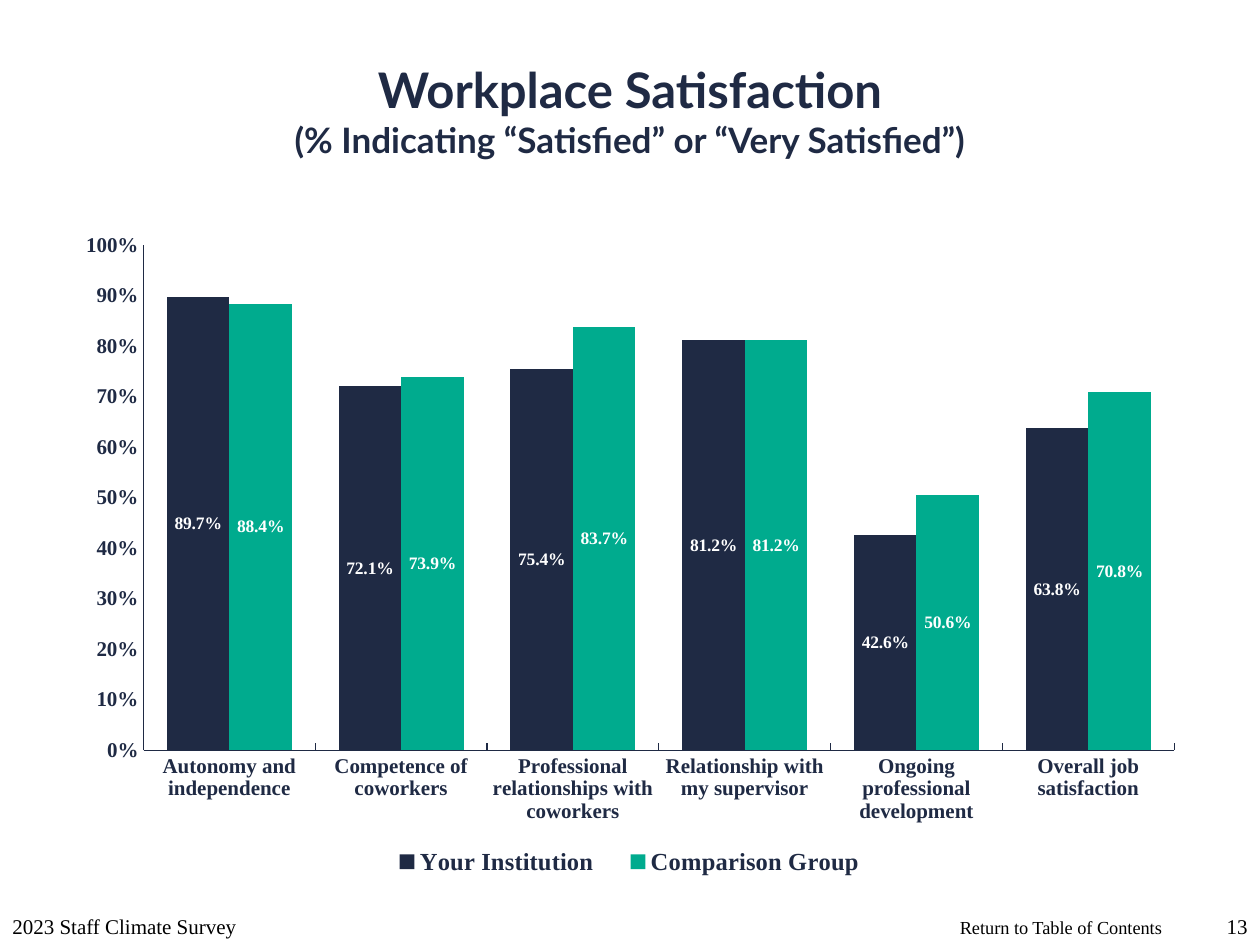
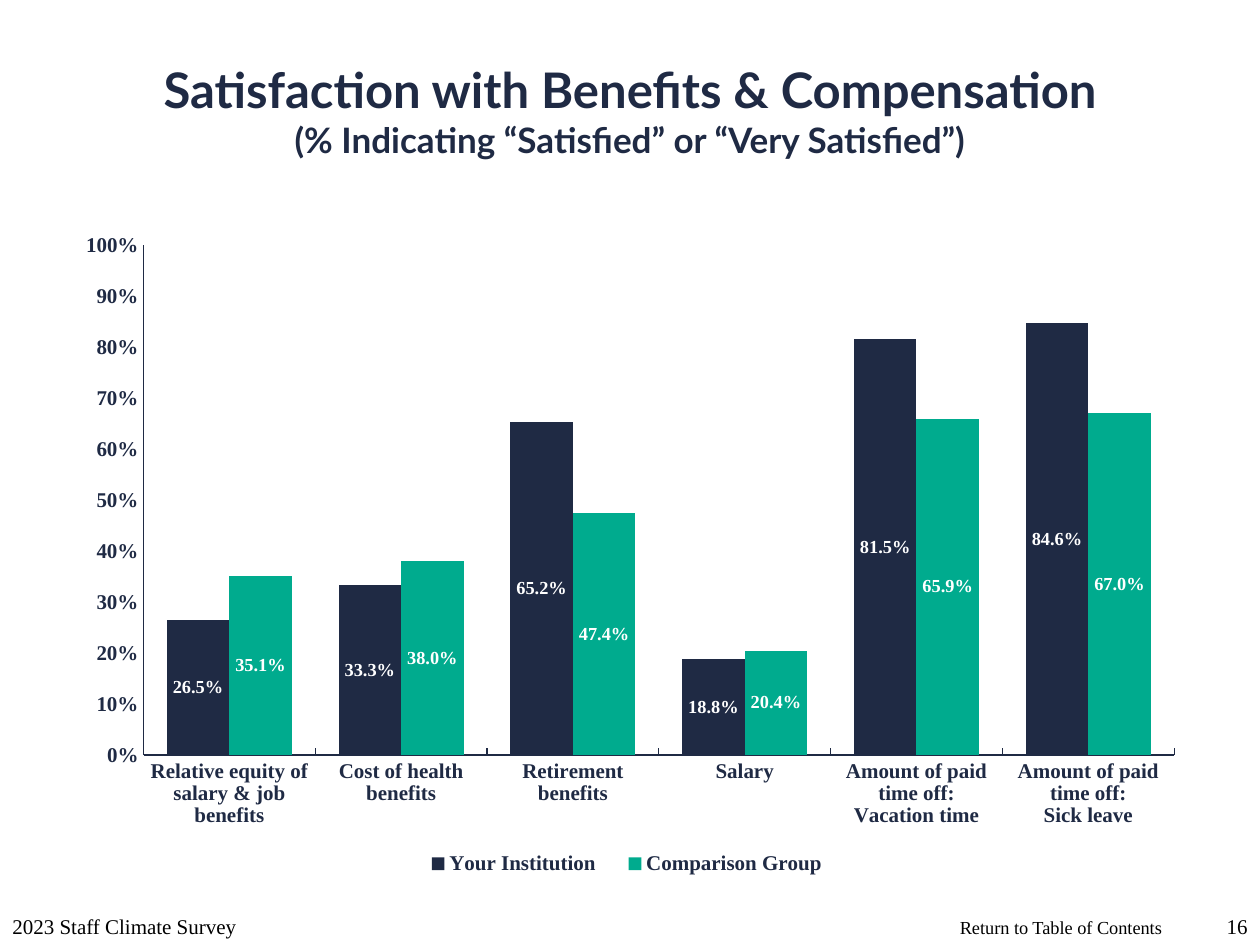
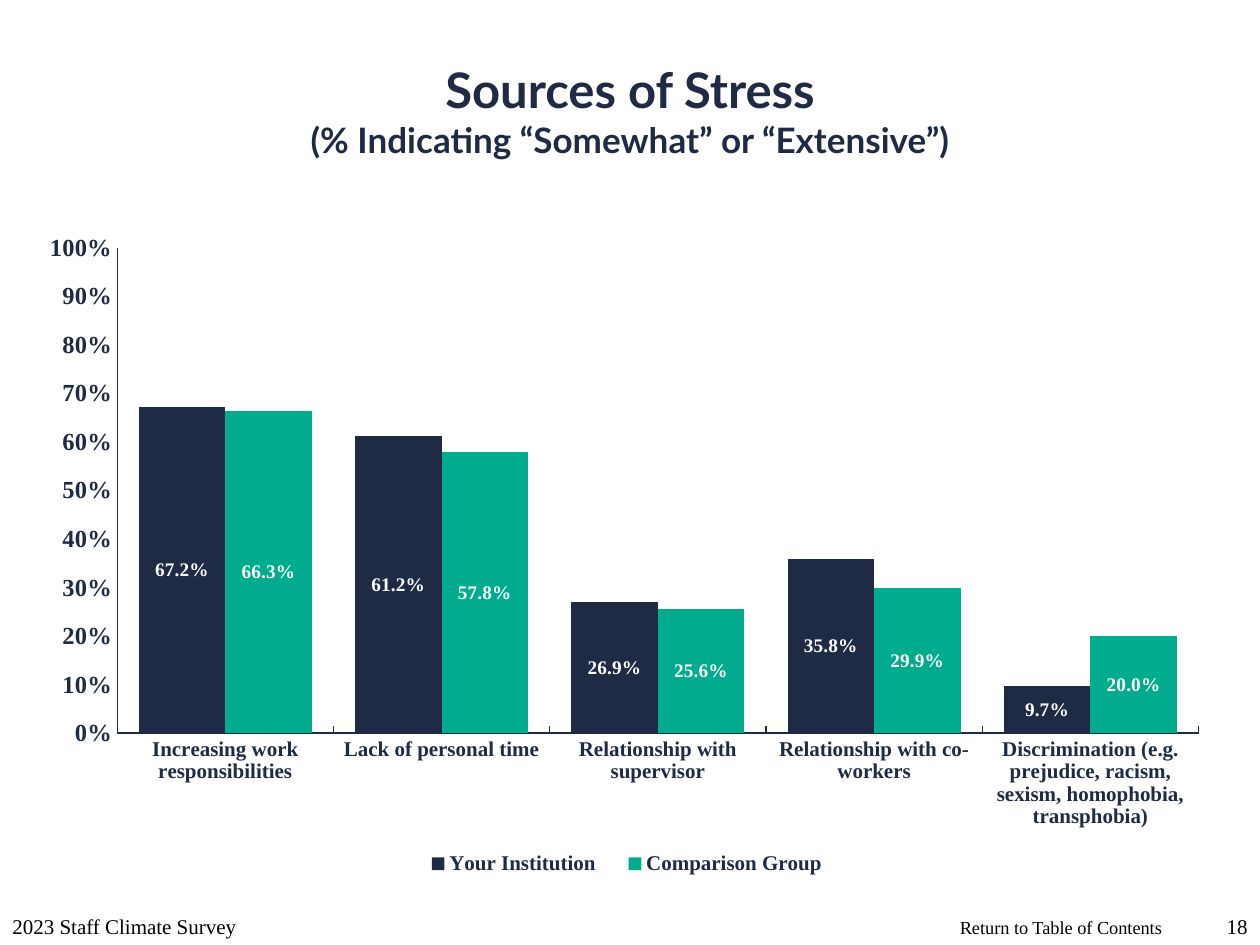
from dataclasses import dataclass

import lxml.etree
import pptx
import pptx.chart.axis
import pptx.chart.chart
import pptx.chart.data
import pptx.dml.color
import pptx.enum.chart
import pptx.enum.text
import pptx.oxml.ns
import pptx.slide
import pptx.text.text
import pptx.util

Pt = pptx.util.Pt
Align = pptx.enum.text.PP_ALIGN
Anchor = pptx.enum.text.MSO_ANCHOR
qn = pptx.oxml.ns.qn

COLORS = {"navy": "1F2A44", "green": "00AB8E", "black": "000000", "white": "FFFFFF"}
TITLE_FONT = "Lato"
BODY_FONT = "Times New Roman"
SLIDE_WIDTH, SLIDE_HEIGHT = 720, 540
FOOTER_TOP, FOOTER_HEIGHT = 504, 36
SERIES = (("Your Institution", "navy"), ("Comparison Group", "green"))
SATISFIED = "(% Indicating “Satisfied” or “Very Satisfied”)"


@dataclass(frozen=True)
class Box:
    """A rectangle on the slide, in points."""
    left: float
    top: float
    width: float
    height: float

    def lengths(self) -> tuple:
        return Pt(self.left), Pt(self.top), Pt(self.width), Pt(self.height)


@dataclass(frozen=True)
class TextStyle:
    size: float
    color: str = "black"
    font: str = BODY_FONT
    bold: bool = False


@dataclass(frozen=True)
class SurveySlide:
    number: int
    title: str
    subtitle: str
    results: dict[str, tuple[float, float]]
    plot: Box
    chart: Box = Box(36, 126, 648, 378)
    legend: Box = Box(232, 483.3, 252.5, 22)
    gap: int = 75
    label_size: float = 10
    value_axis_size: float = 12
    legend_size: float = 12


SURVEY_SLIDES = (
    SurveySlide(
        13, "Workplace Satisfaction", SATISFIED,
        {
            "Autonomy and independence": (0.897, 0.884),
            "Competence of coworkers": (0.721, 0.739),
            "Professional relationships with coworkers": (0.754, 0.837),
            "Relationship with my supervisor": (0.812, 0.812),
            "Ongoing professional development": (0.426, 0.506),
            "Overall job satisfaction": (0.638, 0.708),
        },
        plot=Box(82, 140, 589, 288.8),
        legend=Box(212, 481, 295.5, 24), legend_size=14,
    ),
    SurveySlide(
        16, "Satisfaction with Benefits & Compensation", SATISFIED,
        {
            "Relative equity of salary & job benefits": (0.265, 0.351),
            "Cost of health benefits": (0.333, 0.38),
            "Retirement benefits": (0.652, 0.474),
            "Salary": (0.188, 0.204),
            "Amount of paid time off:\nVacation time": (0.815, 0.659),
            "Amount of paid time off:\nSick leave": (0.846, 0.67),
        },
        plot=Box(82, 140, 589, 291.5), label_size=10.5,
    ),
    SurveySlide(
        18, "Sources of Stress", "(% Indicating “Somewhat” or “Extensive”)",
        {
            "Increasing work responsibilities": (0.672, 0.663),
            "Lack of personal time": (0.612, 0.578),
            "Relationship with supervisor": (0.269, 0.256),
            "Relationship with co-workers": (0.358, 0.299),
            "Discrimination (e.g. prejudice, racism, sexism, homophobia, transphobia)": (0.097, 0.2),
        },
        plot=Box(67, 141.5, 618, 277.5), chart=Box(14.4, 126, 684, 378),
        gap=50, label_size=11, value_axis_size=14,
    ),
)


def rgb(color: str) -> pptx.dml.color.RGBColor:
    return pptx.dml.color.RGBColor.from_string(COLORS[color])


def apply_style(font: pptx.text.text.Font, style: TextStyle) -> None:
    font.name = style.font
    font.size = Pt(style.size)
    font.bold = style.bold
    font.color.rgb = rgb(style.color)


def add_text(
    slide: pptx.slide.Slide, box: Box, lines: list[tuple[str, TextStyle]],
    align: Align = Align.LEFT, anchor: Anchor = Anchor.BOTTOM, wrap: bool = True,
) -> None:
    """Add one paragraph whose lines are parted by line breaks."""
    frame = slide.shapes.add_textbox(*box.lengths()).text_frame
    frame.word_wrap = wrap
    frame.vertical_anchor = anchor
    paragraph = frame.paragraphs[0]
    paragraph.alignment = align
    for index, (text, style) in enumerate(lines):
        if index:
            paragraph.add_line_break()
        run = paragraph.add_run()
        run.text = text
        apply_style(run.font, style)


def add_title(slide: pptx.slide.Slide, title: str, subtitle: str) -> None:
    lines = [
        (text, TextStyle(size, "navy", TITLE_FONT, True))
        for text, size in ((title, 28), (subtitle, 20))
    ]
    add_text(slide, Box(0, 18, SLIDE_WIDTH, 90), lines, Align.CENTER, Anchor.MIDDLE)


def add_footer(slide: pptx.slide.Slide, number: int) -> None:
    style = TextStyle(12)
    add_text(slide, Box(541.4, 520, 131, 20),
             [("Return to Table of Contents", TextStyle(10.5))],
             anchor=Anchor.TOP, wrap=False)
    add_text(slide, Box(0, FOOTER_TOP, 228, FOOTER_HEIGHT),
             [("2023 Staff Climate Survey", style)])
    add_text(slide, Box(SLIDE_WIDTH - 36, FOOTER_TOP, 36, FOOTER_HEIGHT),
             [(str(number), style)], Align.RIGHT)


def style_axis(
    axis: pptx.chart.axis._BaseAxis, size: float,
    tick: pptx.enum.chart.XL_TICK_MARK,
) -> None:
    axis.has_major_gridlines = False
    axis.major_tick_mark = tick
    axis.minor_tick_mark = pptx.enum.chart.XL_TICK_MARK.NONE
    axis.format.line.color.rgb = rgb("navy")
    axis.format.line.width = Pt(0.75)
    apply_style(axis.tick_labels.font, TextStyle(size, "navy", bold=True))


def keep_labels_level(chart: pptx.chart.chart.Chart) -> None:
    """Make long category labels wrap instead of turning."""
    body = chart.element.find(f".//{qn('c:catAx')}/{qn('c:txPr')}/{qn('a:bodyPr')}")
    body.set("rot", "0")
    body.set("vert", "horz")


def place_part(
    part: lxml.etree._Element, index: int, outer: Box, inner: Box,
    target: dict[str, str],
) -> None:
    """Fix a chart part at the given place on the slide."""
    for old_layout in part.findall(qn("c:layout")):
        part.remove(old_layout)
    layout = lxml.etree.Element(qn("c:layout"))
    part.insert(index, layout)
    manual = lxml.etree.SubElement(layout, qn("c:manualLayout"))
    settings = target | {
        "xMode": "edge", "yMode": "edge",
        "x": (inner.left - outer.left) / outer.width,
        "y": (inner.top - outer.top) / outer.height,
        "w": inner.width / outer.width,
        "h": inner.height / outer.height,
    }
    for name, value in settings.items():
        lxml.etree.SubElement(manual, qn(f"c:{name}")).set("val", str(value))


def add_survey_chart(slide: pptx.slide.Slide, survey: SurveySlide) -> None:
    data = pptx.chart.data.CategoryChartData(number_format="0.0%")
    data.categories = list(survey.results)
    for (name, _), values in zip(SERIES, zip(*survey.results.values())):
        data.add_series(name, values)
    chart = slide.shapes.add_chart(
        pptx.enum.chart.XL_CHART_TYPE.COLUMN_CLUSTERED, *survey.chart.lengths(), data
    ).chart
    apply_style(chart.font, TextStyle(10, "navy", bold=True))
    chart.has_title = False
    chart.has_legend = True
    chart.legend.position = pptx.enum.chart.XL_LEGEND_POSITION.BOTTOM
    chart.legend.include_in_layout = False
    apply_style(chart.legend.font, TextStyle(survey.legend_size, "navy", bold=True))

    style_axis(chart.category_axis, 12, pptx.enum.chart.XL_TICK_MARK.INSIDE)
    keep_labels_level(chart)
    value_axis = chart.value_axis
    style_axis(value_axis, survey.value_axis_size, pptx.enum.chart.XL_TICK_MARK.NONE)
    value_axis.minimum_scale, value_axis.maximum_scale = 0, 1
    value_axis.major_unit = 0.1
    value_axis.tick_labels.number_format = "0%"
    value_axis.tick_labels.number_format_is_linked = False

    columns = chart.plots[0]
    columns.vary_by_categories = False
    columns.gap_width = survey.gap
    columns.overlap = 0
    for series, (_, color) in zip(columns.series, SERIES):
        series.format.fill.solid()
        series.format.fill.fore_color.rgb = rgb(color)
        labels = series.data_labels
        labels.show_value = True
        labels.position = pptx.enum.chart.XL_LABEL_POSITION.CENTER
        labels.number_format = "0.0%"
        labels.number_format_is_linked = False
        apply_style(labels.font, TextStyle(survey.label_size, "white", bold=True))

    plot_area = chart.element.find(".//" + qn("c:plotArea"))
    place_part(plot_area, 0, survey.chart, survey.plot, {"layoutTarget": "inner"})
    legend = chart.element.find(".//" + qn("c:legend"))
    place_part(legend, 1, survey.chart, survey.legend, {})


def main() -> None:
    presentation = pptx.Presentation()
    presentation.slide_width = Pt(SLIDE_WIDTH)
    presentation.slide_height = Pt(SLIDE_HEIGHT)
    blank_layout = presentation.slide_layouts[6]
    for survey in SURVEY_SLIDES:
        slide = presentation.slides.add_slide(blank_layout)
        add_title(slide, survey.title, survey.subtitle)
        add_survey_chart(slide, survey)
        add_footer(slide, survey.number)
    presentation.save("out.pptx")


if __name__ == "__main__":
    main()
